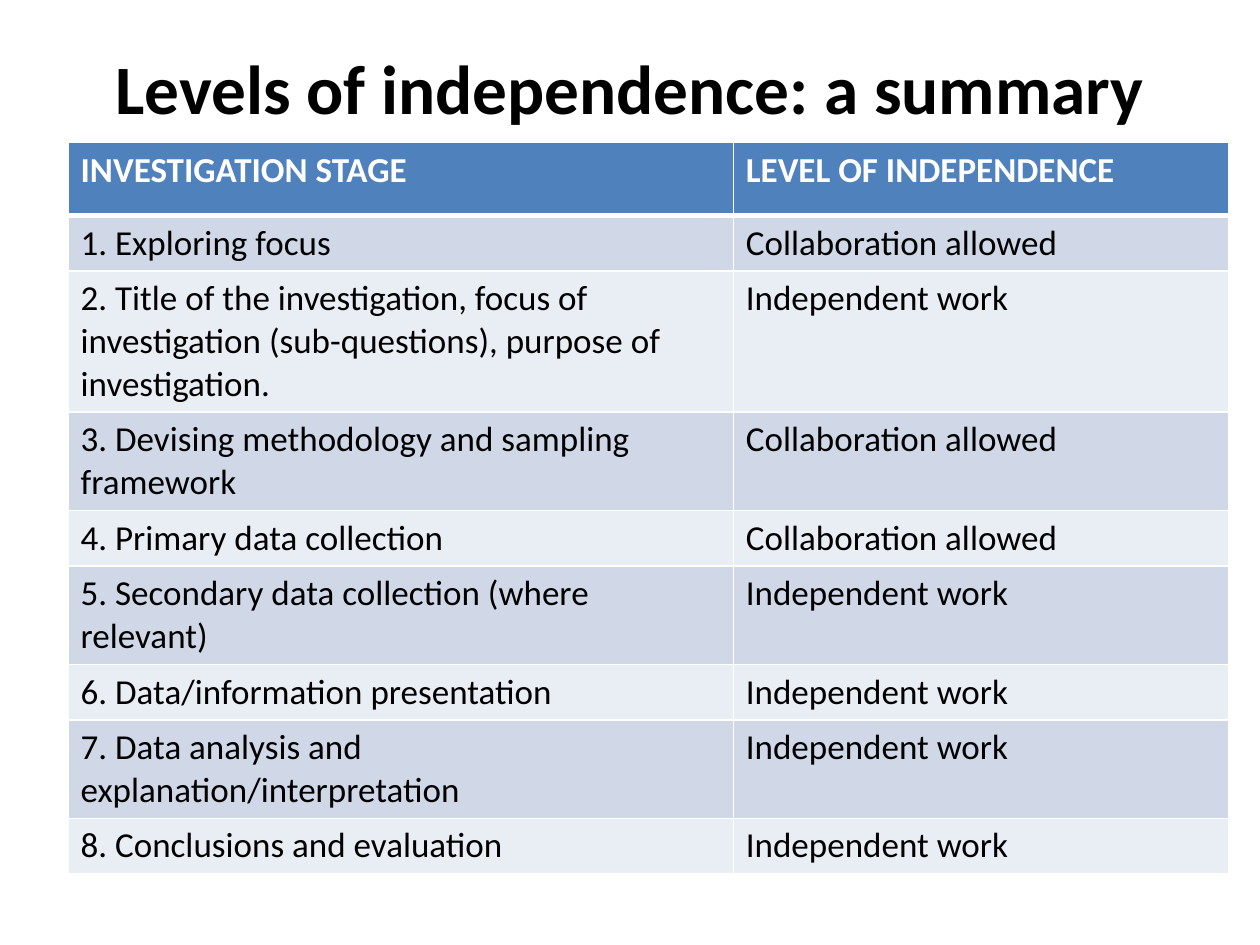
import pptx
import pptx.dml.color
import pptx.enum.text
import pptx.oxml.ns
import pptx.util
from dataclasses import dataclass
from lxml import etree

EMU_PER_PX = 9144  # 100 px to the inch


@dataclass(frozen=True)
class Theme:
    font: str = "Calibri"
    title_size: float = 39.6
    table_size: float = 20
    text: str = "000000"
    header_text: str = "FFFFFF"
    header_fill: str = "4F81BD"
    bands: tuple = ("D0D8E8", "E9EDF4")
    border: str = "FFFFFF"
    border_width: int = 1
    header_rule_width: int = 3


THEME = Theme()

ALONE = "Independent work"
SHARED = "Collaboration allowed"
HEADER = ("INVESTIGATION STAGE", "LEVEL OF INDEPENDENCE")
STAGES = [
    ("Exploring focus", SHARED),
    ("Title of the investigation, focus of investigation (sub-questions), "
     "purpose of investigation.", ALONE),
    ("Devising methodology and sampling framework", SHARED),
    ("Primary data collection", SHARED),
    ("Secondary data collection (where relevant)", ALONE),
    ("Data/information presentation", ALONE),
    ("Data analysis and explanation/interpretation", ALONE),
    ("Conclusions and evaluation", ALONE),
]
COLUMN_WIDTHS = (528, 393)
ROW_HEIGHTS = (58, 42, 107, 74, 42, 74, 42, 74, 42)


def px(length):
    return pptx.util.Emu(length * EMU_PER_PX)


def rgb(value):
    return pptx.dml.color.RGBColor.from_string(value)


def write(frame, text, *, size, color=THEME.text, bold=False, align="LEFT"):
    para = frame.paragraphs[0]
    para.alignment = getattr(pptx.enum.text.PP_ALIGN, align)
    span = para.add_run()
    span.text = text
    span.font.name = THEME.font
    span.font.size = pptx.util.Pt(size)
    span.font.bold = bold
    span.font.color.rgb = rgb(color)


def set_borders(cell, **widths):
    """Draw the cell's borders; widths overrides single sides, in points."""
    properties = cell._tc.get_or_add_tcPr()
    for index, side in enumerate("LRTB"):
        width = pptx.util.Pt(widths.get(side, THEME.border_width))
        line = etree.Element(pptx.oxml.ns.qn(f"a:ln{side}"), w=str(int(width)))
        fill = etree.SubElement(line, pptx.oxml.ns.qn("a:solidFill"))
        etree.SubElement(fill, pptx.oxml.ns.qn("a:srgbClr"), val=THEME.border)
        properties.insert(index, line)


def place_title(page, box, text):
    title = page.shapes.title
    title.left, title.top, title.width, title.height = map(px, box)
    frame = title.text_frame
    frame.word_wrap = True
    frame.auto_size = pptx.enum.text.MSO_AUTO_SIZE.NONE
    frame.vertical_anchor = pptx.enum.text.MSO_ANCHOR.MIDDLE
    write(frame, text, size=THEME.title_size, bold=True, align="CENTER")


def place_table(page, box, rows):
    table = page.shapes.add_table(len(rows), len(HEADER), *map(px, box)).table
    for column, width in zip(table.columns, COLUMN_WIDTHS):
        column.width = px(width)
    for row_index, texts in enumerate(rows):
        table.rows[row_index].height = px(ROW_HEIGHTS[row_index])
        is_header = row_index == 0
        band = THEME.bands[(row_index - 1) % 2]
        for column_index, text in enumerate(texts):
            cell = table.cell(row_index, column_index)
            cell.fill.solid()
            cell.fill.fore_color.rgb = rgb(THEME.header_fill if is_header else band)
            # The heavy rule is shared by the header and the row below it
            if is_header:
                set_borders(cell, B=THEME.header_rule_width)
            elif row_index == 1:
                set_borders(cell, T=THEME.header_rule_width)
            else:
                set_borders(cell)
            write(cell.text_frame, text, size=THEME.table_size, bold=is_header,
                  color=THEME.header_text if is_header else THEME.text)


def main():
    deck = pptx.Presentation()
    deck.slide_width, deck.slide_height = px(1000), px(750)
    page = deck.slides.add_slide(deck.slide_layouts[5])

    # Heading
    place_title(page, (50, 30, 900, 77), "Levels of independence: a summary")

    # Numbered stages under the column headings
    stages = [(f"{number}. {stage}", level)
              for number, (stage, level) in enumerate(STAGES, start=1)]
    place_table(page, (54, 113, sum(COLUMN_WIDTHS), sum(ROW_HEIGHTS)),
                [HEADER, *stages])

    deck.save("out.pptx")


if __name__ == "__main__":
    main()
